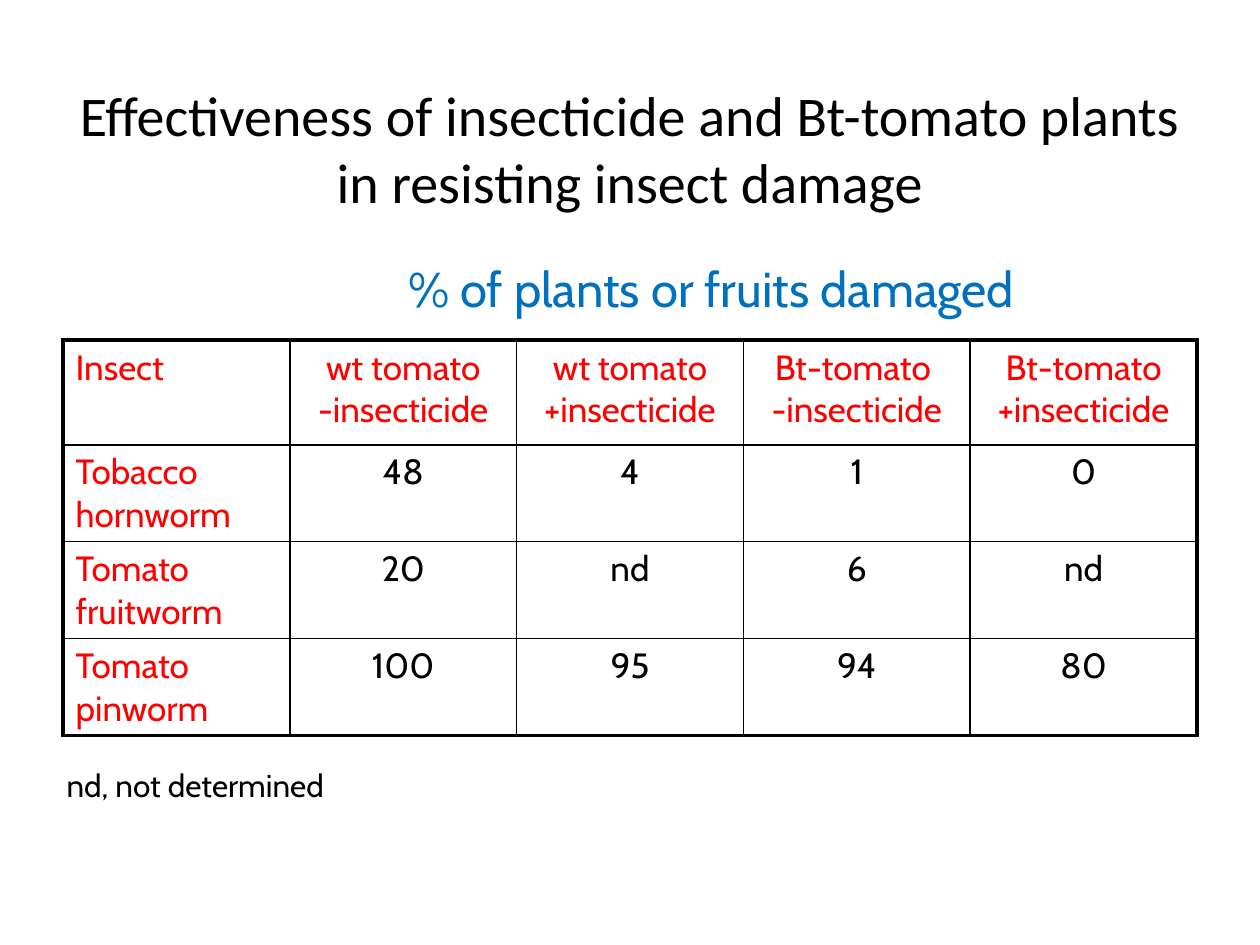
"""Build a slide with a table of insect damage to tomato plants."""
from dataclasses import dataclass

from lxml.etree import SubElement
from pptx import Presentation
from pptx.dml.color import RGBColor
from pptx.enum.text import MSO_ANCHOR, PP_ALIGN
from pptx.oxml.ns import qn
from pptx.slide import Slide
from pptx.table import _Cell
from pptx.text.text import TextFrame
from pptx.util import Inches, Pt

BLACK = RGBColor(0x00, 0x00, 0x00)
RED = RGBColor(0xFF, 0x00, 0x00)
BLUE = RGBColor(0x00, 0x70, 0xC0)
WIDTH, HEIGHT = Inches(10), Inches(7.5)
THIN, THICK = Pt(1), Pt(2.25)
TABLE_LEFT, TABLE_TOP, TABLE_WIDTH = 0.05, 0.36, 0.9
HEADER_HEIGHT, ROW_HEIGHT = Inches(0.83), Inches(0.77)

ROWS = [
    ["Insect", "wt tomato\n-insecticide", "wt tomato +insecticide",
     "Bt-tomato \n-insecticide", "Bt-tomato +insecticide"],
    ["Tobacco hornworm", "48", "4", "1", "0"],
    ["Tomato fruitworm", "20", "nd", "6", "nd"],
    ["Tomato pinworm", "100", "95", "94", "80"],
]


@dataclass
class Label:
    """A text box placed by shares of the slide's size."""
    text: str
    left: float
    top: float
    width: float
    height: float
    size: int
    color: RGBColor = BLACK
    font: str = "Cabin"
    align: PP_ALIGN = PP_ALIGN.LEFT
    wrap: bool = False
    anchor: MSO_ANCHOR = MSO_ANCHOR.TOP


LABELS = [
    Label("Effectiveness of insecticide and Bt-tomato plants in resisting insect damage",
          0.05, 0.056, 0.9, 0.2, 32, font="Calibri", align=PP_ALIGN.CENTER,
          wrap=True, anchor=MSO_ANCHOR.MIDDLE),
    Label("% of plants or fruits damaged", 0.314, 0.267, 0.537, 0.076, 28, BLUE),
    Label("nd, not determined", 0.043, 0.804, 0.232, 0.053, 18),
]


def write(tf: TextFrame, text: str, size: int, color: RGBColor,
          font: str, align: PP_ALIGN) -> None:
    """Write each line of the text as a paragraph."""
    for i, line in enumerate(text.split("\n")):
        p = tf.add_paragraph() if i else tf.paragraphs[0]
        p.alignment = align
        r = p.add_run()
        r.text = line
        r.font.name, r.font.size = font, Pt(size)
        r.font.color.rgb = color


def add_label(s: Slide, label: Label) -> None:
    """Add a text box to the slide."""
    sp = s.shapes.add_textbox(int(label.left * WIDTH), int(label.top * HEIGHT),
                              int(label.width * WIDTH), int(label.height * HEIGHT))
    tf = sp.text_frame
    tf.word_wrap, tf.vertical_anchor = label.wrap, label.anchor
    write(tf, label.text, label.size, label.color, label.font, label.align)


def set_borders(cell: _Cell, outer: dict[str, bool]) -> None:
    """Draw the cell's borders, thick on the outer edges."""
    tc_pr = cell._tc.get_or_add_tcPr()
    for i, (side, is_outer) in enumerate(outer.items()):
        ln = SubElement(tc_pr, qn(f"a:ln{side}"), w=str(THICK if is_outer else THIN))
        fill = SubElement(ln, qn("a:solidFill"))
        SubElement(fill, qn("a:srgbClr"), val=str(BLACK))
        tc_pr.insert(i, ln)


def add_damage_table(s: Slide) -> None:
    """Add the table of damage by insect and treatment."""
    n_rows, n_cols = len(ROWS), len(ROWS[0])
    height = HEADER_HEIGHT + (n_rows - 1) * ROW_HEIGHT
    table = s.shapes.add_table(n_rows, n_cols, int(TABLE_LEFT * WIDTH),
                               int(TABLE_TOP * HEIGHT), int(TABLE_WIDTH * WIDTH),
                               height).table
    table.first_row = table.horz_banding = False
    for i, values in enumerate(ROWS):
        table.rows[i].height = ROW_HEIGHT if i else HEADER_HEIGHT
        for j, value in enumerate(values):
            cell = table.cell(i, j)
            cell.fill.background()
            write(cell.text_frame, value, 20, BLACK if i and j else RED, "Cabin",
                  PP_ALIGN.CENTER if j else PP_ALIGN.LEFT)
            set_borders(cell, {"L": j == 0, "R": j == n_cols - 1,
                               "T": i == 0, "B": i == n_rows - 1})


def main() -> None:
    """Build and save the slide."""
    prs = Presentation()
    prs.slide_width, prs.slide_height = WIDTH, HEIGHT
    s = prs.slides.add_slide(prs.slide_layouts[6])
    title, *notes = LABELS
    add_label(s, title)
    add_damage_table(s)
    for label in notes:
        add_label(s, label)
    prs.save("out.pptx")


if __name__ == "__main__":
    main()
